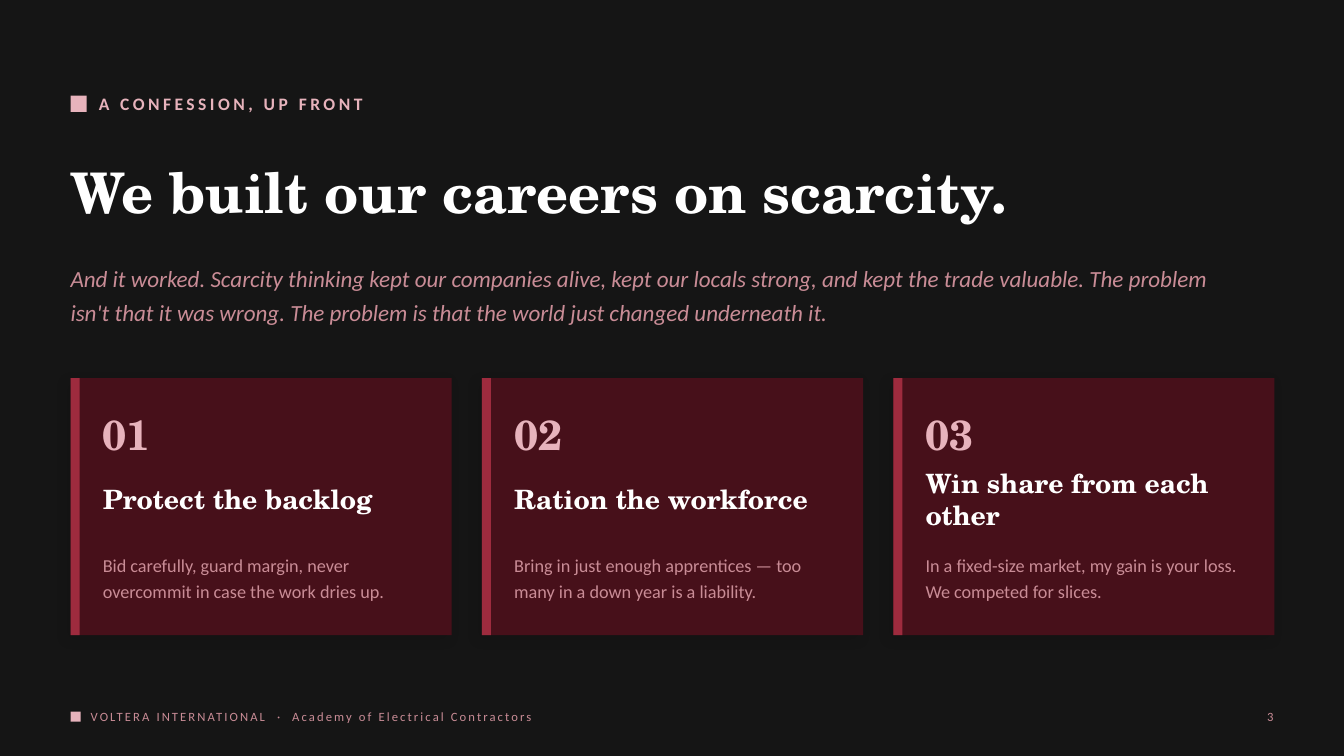
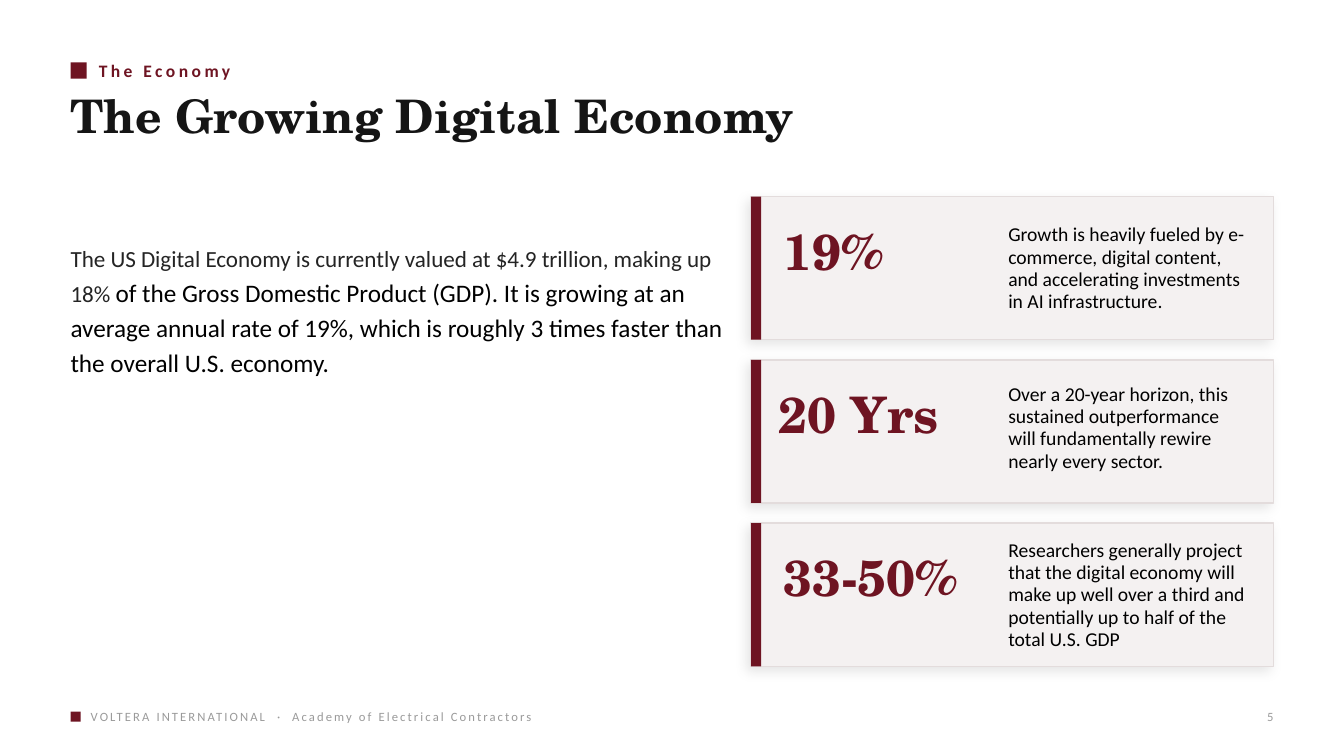
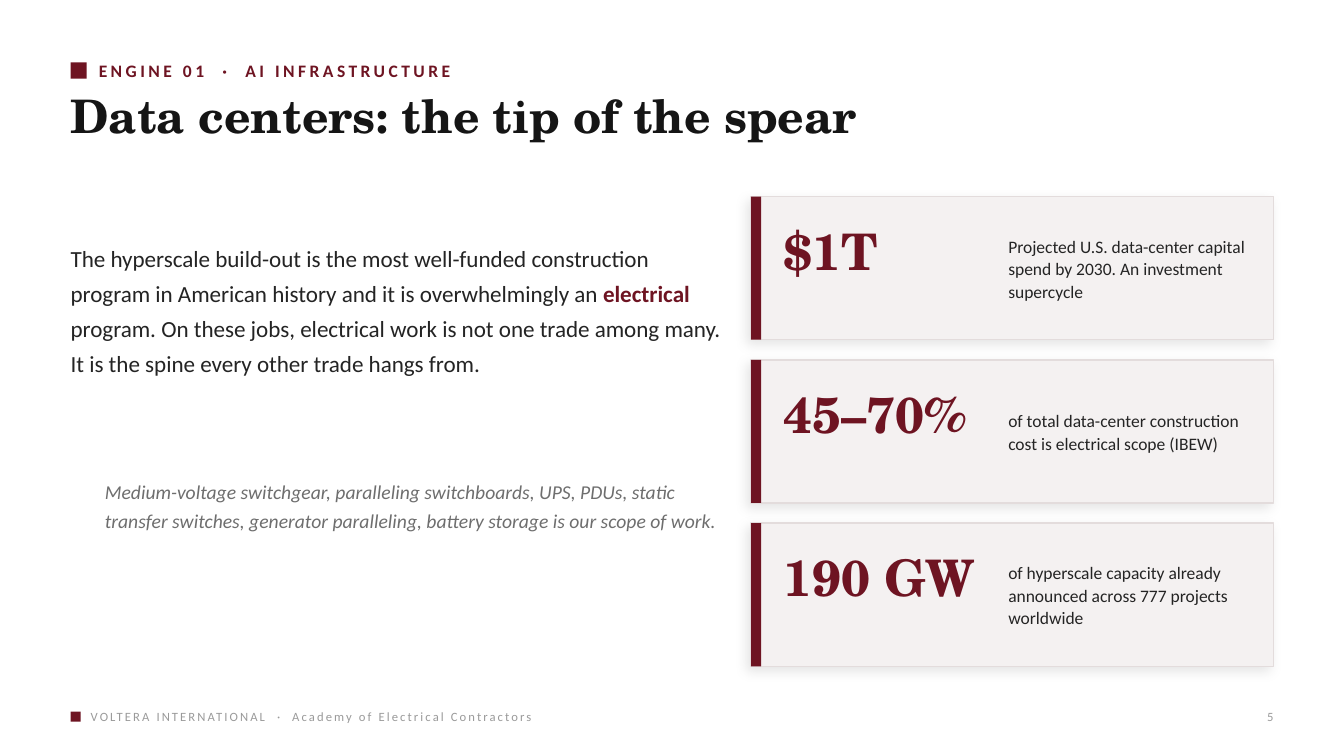
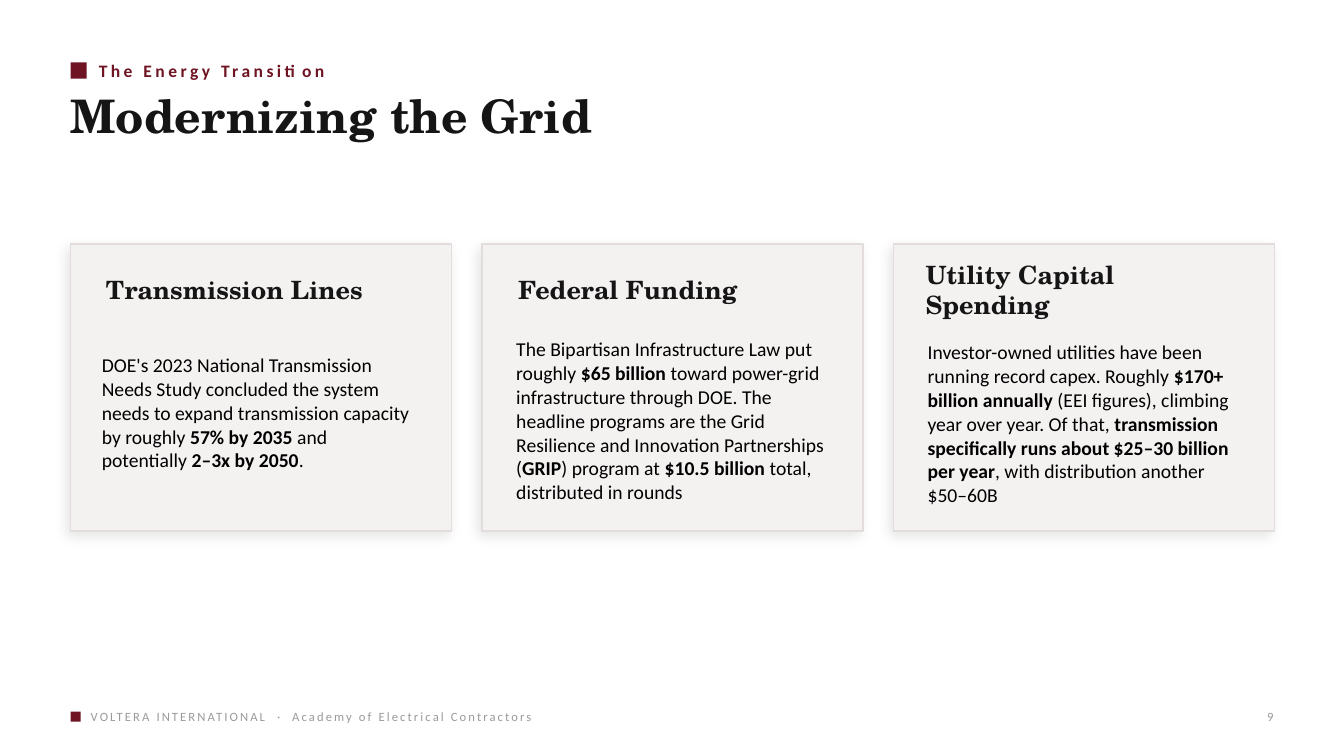
from lxml import etree
from pptx import Presentation
from pptx.dml.color import RGBColor
from pptx.enum.shapes import MSO_SHAPE as Preset
from pptx.enum.text import MSO_ANCHOR as Anchor, PP_ALIGN as Align
from pptx.oxml.ns import qn
from pptx.util import Pt

PX = 9144  # 100 px to the inch

WHITE = RGBColor(0xFF, 0xFF, 0xFF)
BLACK = RGBColor(0x00, 0x00, 0x00)
INK = RGBColor(0x15, 0x15, 0x15)
BODY_GRAY = RGBColor(0x24, 0x24, 0x24)
NOTE_GRAY = RGBColor(0x6E, 0x6E, 0x6E)
FOOTER_GRAY = RGBColor(0x9A, 0x9A, 0x9A)
PANEL = RGBColor(0xF4, 0xF1, 0xF1)
PANEL_EDGE = RGBColor(0xE3, 0xDC, 0xDC)
MAROON = RGBColor(0x6E, 0x14, 0x22)
DARK_MAROON = RGBColor(0x47, 0x10, 0x1A)
CRIMSON = RGBColor(0x9E, 0x2B, 0x3E)
BLUSH = RGBColor(0xE7, 0xB3, 0xBC)
ROSE = RGBColor(0xC9, 0x8C, 0x96)

SANS = {"name": "Calibri"}
SERIF = {"name": "TeX Gyre Schola", "bold": True}
EYEBROW = SANS | {"size": Pt(12.5), "bold": True}
TITLE = SERIF | {"size": Pt(33), "color": INK}
BODY = SANS | {"size": Pt(16.5), "color": BODY_GRAY}
BODY_LARGE = BODY | {"size": Pt(18), "color": BLACK}
BODY_STRONG = BODY | {"color": MAROON, "bold": True}
NOTE = SANS | {"size": Pt(14), "color": NOTE_GRAY, "italic": True}
STAT = SERIF | {"size": Pt(36), "color": MAROON}
STAT_LABEL = SANS | {"size": Pt(12.5), "color": BODY_GRAY}
CARD_TITLE = SERIF | {"size": Pt(18), "color": INK}
CARD_TEXT = SANS | {"size": Pt(14), "color": BLACK}
CARD_STRONG = CARD_TEXT | {"bold": True}
HEADLINE = SERIF | {"size": Pt(40), "color": WHITE}
LEAD = SANS | {"size": Pt(16.5), "color": ROSE, "italic": True}
HABIT_NUMBER = SERIF | {"size": Pt(30), "color": BLUSH}
HABIT_TITLE = SERIF | {"size": Pt(19), "color": WHITE}
HABIT_TEXT = SANS | {"size": Pt(13), "color": ROSE}

MARGIN = 70
CARD_WIDTH, CARD_GAP = 378, 30
STAT_LEFT, STAT_TOP, STAT_WIDTH, STAT_HEIGHT, STAT_GAP = 745, 195, 518, 142, 20
FOOTER = "VOLTERA INTERNATIONAL  ·  Academy of Electrical Contractors"


def card_left(index):
    return MARGIN + index * (CARD_WIDTH + CARD_GAP)


def add_rect(page, left, top, width, height, fill, edge=None):
    box = page.shapes.add_shape(
        Preset.RECTANGLE, *(length * PX for length in (left, top, width, height)))
    box.shadow.inherit = False
    box.fill.solid()
    box.fill.fore_color.rgb = fill
    if edge is None:
        box.line.fill.background()
    else:
        box.line.color.rgb = edge
        box.line.width = Pt(1)
    return box


def add_panel(page, left, top, width, height, fill, edge=None):
    """Add a rectangle with a soft shadow towards the lower left."""
    box = add_rect(page, left, top, width, height, fill, edge)
    effects = box.element.spPr.find(qn("a:effectLst"))
    shadow = etree.SubElement(
        effects, qn("a:outerShdw"), blurRad=str(Pt(9)), dist=str(Pt(4)),
        dir=str(135 * 60000), algn="bl", rotWithShape="0")
    color = etree.SubElement(shadow, qn("a:srgbClr"), val=str(BLACK))
    etree.SubElement(color, qn("a:alpha"), val="10000")


def add_text(page, left, top, width, height, content, style, leading=None,
             tracking=None, align=Align.LEFT, anchor=Anchor.MIDDLE):
    """Add one paragraph; content is a string or a list of (text, style) spans."""
    box = page.shapes.add_textbox(
        *(length * PX for length in (left, top, width, height)))
    frame = box.text_frame
    frame_format = {"word_wrap": True, "vertical_anchor": anchor, "margin_left": 0,
                    "margin_top": 0, "margin_right": 0, "margin_bottom": 0}
    for key, value in frame_format.items():
        setattr(frame, key, value)
    para = frame.paragraphs[0]
    para.alignment = align
    if leading:
        para.line_spacing = Pt(leading)
    spans = [(content, style)] if isinstance(content, str) else content
    for text, span_style in spans:
        span = para.add_run()
        span.text = text
        for key, value in span_style.items():
            if key == "color":
                span.font.color.rgb = value
            else:
                setattr(span.font, key, value)
        if tracking:
            span.font._element.set("spc", str(tracking))


def emphasize(text, plain, strong):
    """Split text at ** marks into alternating plain and strong spans."""
    return [(part, strong if index % 2 else plain)
            for index, part in enumerate(text.split("**"))]


def add_page(deck, number, eyebrow, eyebrow_top, background, accent, muted):
    """Add a slide with its background, eyebrow line and footer."""
    page = deck.slides.add_slide(deck.slide_layouts[6])
    page.background.fill.solid()
    page.background.fill.fore_color.rgb = background
    add_rect(page, MARGIN, eyebrow_top + 7, 16, 16, accent)
    add_text(page, 98, eyebrow_top, 1000, 30, eyebrow,
             EYEBROW | {"color": accent}, tracking=250)
    add_rect(page, MARGIN, 706, 10, 10, accent)
    small = SANS | {"size": Pt(9), "color": muted}
    add_text(page, 90, 692, 800, 38, FOOTER, small, tracking=150)
    add_text(page, 1183, 692, 80, 38, str(number), small, align=Align.RIGHT)
    return page


def add_light_page(deck, number, eyebrow, title):
    page = add_page(deck, number, eyebrow, 55, WHITE, MAROON, FOOTER_GRAY)
    add_text(page, MARGIN, 92, 1190, 100, title, TITLE, leading=36, anchor=Anchor.TOP)
    return page


def add_habit(page, index, title, text):
    left = card_left(index)
    add_panel(page, left, 375, CARD_WIDTH, 255, DARK_MAROON)
    add_rect(page, left, 375, 9, 255, CRIMSON)
    add_text(page, left + 32, 400, 200, 60, f"{index + 1:02}", HABIT_NUMBER)
    add_text(page, left + 32, 470, 318, 50, title, HABIT_TITLE)
    add_text(page, left + 32, 522, 316, 100, text, HABIT_TEXT, leading=18)


def add_stat(page, index, value, label, style, value_shift=0, label_shift=0):
    top = STAT_TOP + index * (STAT_HEIGHT + STAT_GAP)
    add_panel(page, STAT_LEFT, top, STAT_WIDTH, STAT_HEIGHT, PANEL, PANEL_EDGE)
    add_rect(page, STAT_LEFT, top, 10, STAT_HEIGHT, MAROON)
    add_text(page, STAT_LEFT + 32 + value_shift, top + 18, 220, 70, value, STAT)
    add_text(page, 1000, top + 16 + label_shift, 238, 110, label, style, leading=16)


def add_card(page, index, title, title_inset, text, text_inset, text_top, text_height):
    left = card_left(index)
    add_panel(page, left, 242, CARD_WIDTH, 285, PANEL, PANEL_EDGE)
    add_text(page, left + title_inset, 262, 310, 50, title, CARD_TITLE)
    add_text(page, left + text_inset, text_top, 312, text_height,
             emphasize(text, CARD_TEXT, CARD_STRONG), CARD_TEXT, leading=17)


def build_scarcity(deck):
    page = add_page(deck, 3, "A CONFESSION, UP FRONT", 88, INK, BLUSH, ROSE)
    add_text(page, MARGIN, 145, 1200, 90, "We built our careers on scarcity.", HEADLINE)
    add_text(page, MARGIN, 245, 1140, 90,
             "And it worked. Scarcity thinking kept our companies alive, kept our locals "
             "strong, and kept the trade valuable. The problem isn't that it was wrong. "
             "The problem is that the world just changed underneath it.",
             LEAD, leading=24)
    habits = [
        ("Protect the backlog",
         "Bid carefully, guard margin, never overcommit in case the work dries up."),
        ("Ration the workforce",
         "Bring in just enough apprentices — too many in a down year is a liability."),
        ("Win share from each other",
         "In a fixed-size market, my gain is your loss. We competed for slices."),
    ]
    for index, habit in enumerate(habits):
        add_habit(page, index, *habit)


def build_economy(deck):
    page = add_light_page(deck, 5, "The Economy", "The Growing Digital Economy")
    spans = [
        ("The US Digital Economy is currently valued at $4.9 trillion, making up 18% ",
         BODY),
        ("of the Gross Domestic Product (GDP). It is growing at an average annual rate "
         "of 19%, which is roughly 3 times faster than the overall U.S. economy.",
         BODY_LARGE),
    ]
    add_text(page, MARGIN, 205, 655, 200, spans, BODY, leading=25)
    stats = [
        ("19%", "Growth is heavily fueled by e-commerce, digital content, and "
         "accelerating investments in AI infrastructure.", CARD_TEXT),
        ("20 Yrs", "Over a 20-year horizon, this sustained outperformance will "
         "fundamentally rewire nearly every sector.", CARD_TEXT, -5, -4),
        ("33-50%", "Researchers generally project that the digital economy will make up "
         "well over a third and potentially up to half of the total U.S. GDP", CARD_TEXT),
    ]
    for index, stat in enumerate(stats):
        add_stat(page, index, *stat)


def build_data_centers(deck):
    page = add_light_page(deck, 5, "ENGINE 01  ·  AI INFRASTRUCTURE",
                          "Data centers: the tip of the spear")
    text = ("The hyperscale build-out is the most well-funded construction program in "
            "American history and it is overwhelmingly an **electrical** program. On these "
            "jobs, electrical work is not one trade among many. It is the spine every "
            "other trade hangs from.")
    add_text(page, MARGIN, 205, 655, 200, emphasize(text, BODY, BODY_STRONG), BODY,
             leading=25)
    add_text(page, 104, 424, 617, 150,
             "Medium-voltage switchgear, paralleling switchboards, UPS, PDUs, static "
             "transfer switches, generator paralleling, battery storage is our scope of "
             "work.", NOTE, leading=21)
    stats = [
        ("$1T", "Projected U.S. data-center capital spend by 2030. An investment "
         "supercycle"),
        ("45–70%", "of total data-center construction cost is electrical scope (IBEW)"),
        ("190 GW", "of hyperscale capacity already announced across 777 projects "
         "worldwide"),
    ]
    for index, (value, label) in enumerate(stats):
        add_stat(page, index, value, label, STAT_LABEL)


def build_grid(deck):
    page = add_light_page(deck, 9, "The Energy Transition", "Modernizing the Grid")
    cards = [
        ("Transmission Lines", 35,
         "DOE's 2023 National Transmission Needs Study concluded the system needs to "
         "expand transmission capacity by roughly **57% by 2035** and potentially "
         "**2–3x by 2050**.", 31, 335, 148),
        ("Federal Funding", 36,
         "The Bipartisan Infrastructure Law put roughly **$65 billion** toward power-grid "
         "infrastructure through DOE. The headline programs are the Grid Resilience and "
         "Innovation Partnerships (**GRIP**) program at **$10.5 billion** total, "
         "distributed in rounds", 34, 312, 210),
        ("Utility Capital Spending", 32,
         "Investor-owned utilities have been running record capex. Roughly **$170+ "
         "billion annually** (EEI figures), climbing year over year. Of that, "
         "**transmission specifically runs about $25–30 billion per year**, with "
         "distribution another $50–60B", 34, 326, 188),
    ]
    for index, card in enumerate(cards):
        add_card(page, index, *card)


def main():
    deck = Presentation()
    deck.slide_width = 1333 * PX
    deck.slide_height = 750 * PX
    for build in (build_scarcity, build_economy, build_data_centers, build_grid):
        build(deck)
    deck.save("out.pptx")


if __name__ == "__main__":
    main()
